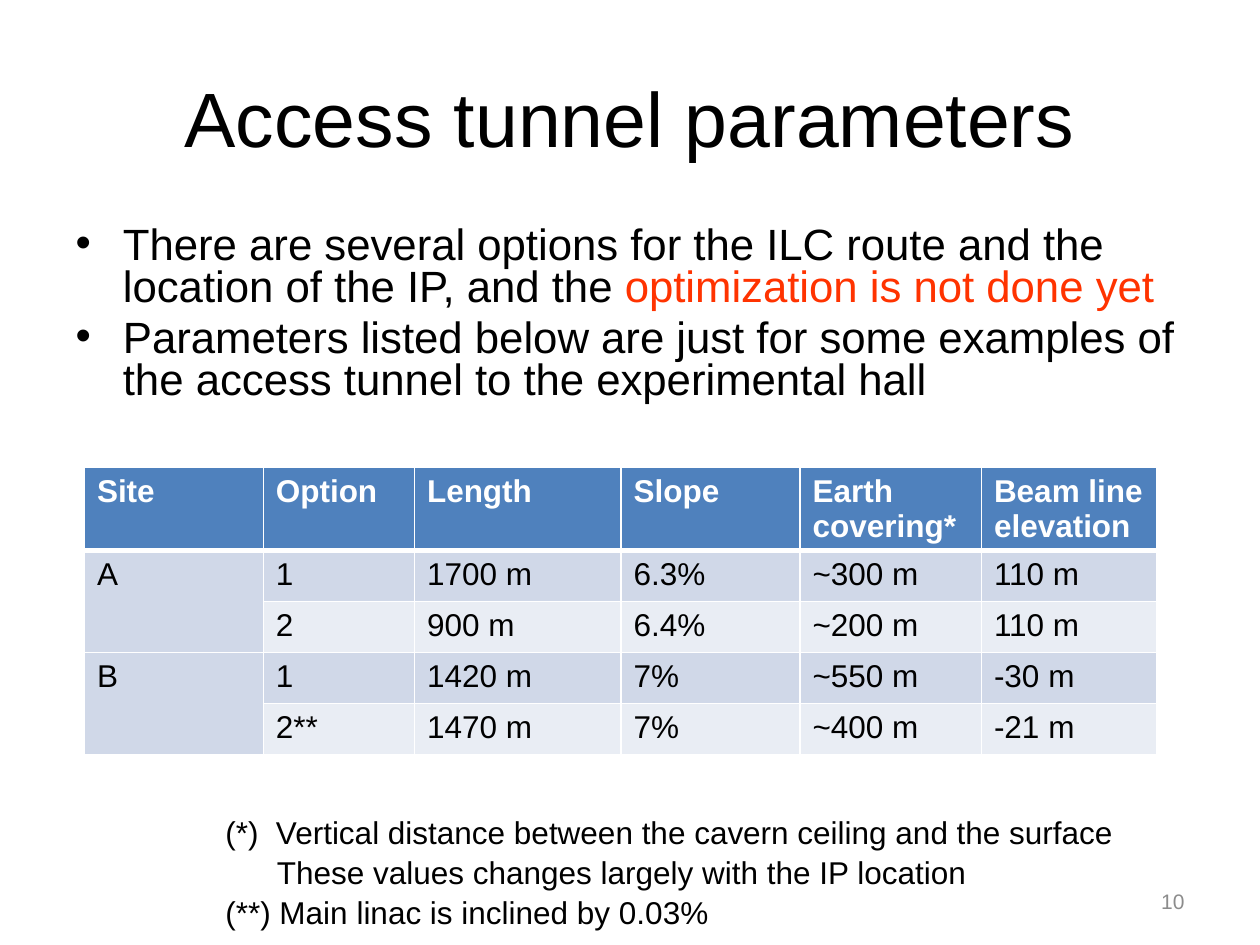
from lxml import etree
from pptx import Presentation
from pptx.dml.color import RGBColor
from pptx.enum.text import MSO_ANCHOR, MSO_AUTO_SIZE, PP_ALIGN
from pptx.oxml.ns import qn
from pptx.util import Inches, Pt

CENTER, RIGHT = PP_ALIGN.CENTER, PP_ALIGN.RIGHT
MIDDLE = MSO_ANCHOR.MIDDLE
NO_AUTOFIT = MSO_AUTO_SIZE.NONE

THEME = {
    "font": "Arial",
    "title_size": 44, "body_size": 25, "text_size": 18, "number_size": 12,
    "text": "000000", "accent": "FF3300", "muted": "8C8C8C", "white": "FFFFFF",
    "header": "4F81BD", "bands": ("D0D8E8", "E9EDF4"),
}


def add_text(paragraph, text, size, color="text", bold=False):
    font_format = {"name": THEME["font"], "size": Pt(THEME[size]), "bold": bold}
    run = paragraph.add_run()
    run.text = text
    for name, value in font_format.items():
        setattr(run.font, name, value)
    run.font.color.rgb = RGBColor.from_string(THEME[color])


def set_borders(cell, bottom_width):
    properties = cell._tc.get_or_add_tcPr()
    widths = {"a:lnL": 1, "a:lnR": 1, "a:lnT": 1, "a:lnB": bottom_width}
    for position, (tag, width) in enumerate(widths.items()):
        line = etree.Element(qn(tag), w=str(Pt(width)))
        fill = etree.SubElement(line, qn("a:solidFill"))
        etree.SubElement(fill, qn("a:srgbClr"), val=THEME["white"])
        properties.insert(position, line)


presentation = Presentation()
presentation.slide_width = Inches(10)
presentation.slide_height = Inches(7.5)
slide = presentation.slides.add_slide(presentation.slide_layouts[1])

# Title
title = slide.shapes.title
title.left, title.top, title.width, title.height = map(Inches, (0.5, 0.3, 9, 1.25))
title.text_frame.vertical_anchor = MIDDLE
title.text_frame.auto_size = NO_AUTOFIT
title.text_frame.paragraphs[0].alignment = CENTER
add_text(title.text_frame.paragraphs[0], "Access tunnel parameters", "title_size")

# Bulleted list
bullets = [
    [("There are several options for the ILC route and the location of the IP, and the ", "text"),
     ("optimization is not done yet", "accent")],
    [("Parameters listed below are just for some examples of the access tunnel "
      "to the experimental hall", "text")],
]
body = slide.placeholders[1]
body.left, body.top, body.width, body.height = map(Inches, (0.5, 1.75, 9, 1.84))
body.text_frame.auto_size = NO_AUTOFIT
for index, parts in enumerate(bullets):
    paragraph = body.text_frame.paragraphs[0] if index == 0 else body.text_frame.add_paragraph()
    paragraph.line_spacing = 0.8
    paragraph.space_before = Pt(5)
    for text, color in parts:
        add_text(paragraph, text, "body_size", color)

# Parameter table
rows = [
    ["Site", "Option", "Length", "Slope", "Earth covering*", "Beam line elevation"],
    ["A", "1", "1700 m", "6.3%", "~300 m", "110 m"],
    ["", "2", "900 m", "6.4%", "~200 m", "110 m"],
    ["B", "1", "1420 m", "7%", "~550 m", "-30 m"],
    ["", "2**", "1470 m", "7%", "~400 m", "-21 m"],
]
column_widths = [1.42, 1.2, 1.64, 1.42, 1.44, 1.39]
row_heights = [0.66] + [0.405] * 4
table = slide.shapes.add_table(
    len(rows), len(column_widths), Inches(0.67), Inches(3.71),
    Inches(sum(column_widths)), Inches(sum(row_heights))).table
for column, width in zip(table.columns, column_widths):
    column.width = Inches(width)
for row_index, values in enumerate(rows):
    is_header = row_index == 0
    table.rows[row_index].height = Inches(row_heights[row_index])
    fill_color = THEME["header"] if is_header else THEME["bands"][(row_index - 1) % 2]
    for column_index, value in enumerate(values):
        cell = table.cell(row_index, column_index)
        cell.fill.solid()
        cell.fill.fore_color.rgb = RGBColor.from_string(fill_color)
        set_borders(cell, 3 if is_header else 1)
        if value:
            add_text(cell.text_frame.paragraphs[0], value, "text_size",
                     "white" if is_header else "text", is_header)

# Each site covers two rows
for first_row in (1, 3):
    table.cell(first_row, 0).merge(table.cell(first_row + 1, 0))

# Footnotes
footnotes = [
    ("(*)  Vertical distance between the cavern ceiling and the surface", 0),
    ("These values changes largely with the IP location", 0.41),
    ("(**) Main linac is inclined by 0.03%", 0),
]
notes = slide.shapes.add_textbox(Inches(1.69), Inches(6.39), Inches(7.36), Inches(1.01))
notes.text_frame.word_wrap = True
for index, (text, indent) in enumerate(footnotes):
    paragraph = notes.text_frame.paragraphs[0] if index == 0 else notes.text_frame.add_paragraph()
    paragraph.line_spacing = 1.05
    paragraph._p.get_or_add_pPr().set("marL", str(Inches(indent)))
    add_text(paragraph, text, "text_size")

# Slide number
number = slide.shapes.add_textbox(Inches(7.17), Inches(6.95), Inches(2.33), Inches(0.4))
number.text_frame.word_wrap = True
number.text_frame.vertical_anchor = MIDDLE
number.text_frame.paragraphs[0].alignment = RIGHT
add_text(number.text_frame.paragraphs[0], "10", "number_size", "muted")

presentation.save("out.pptx")
